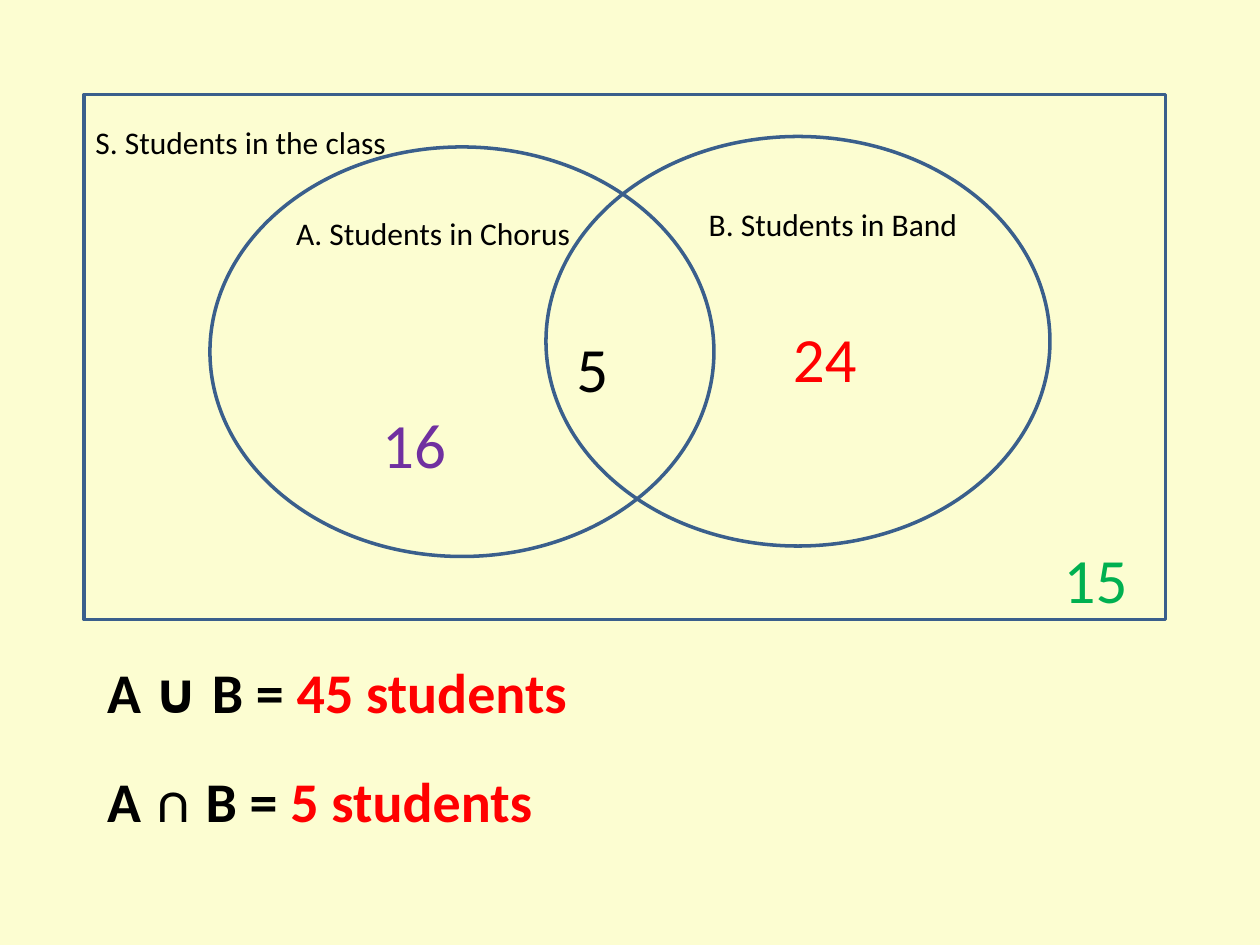
from pptx import Presentation
from pptx.dml.color import RGBColor
from pptx.enum.shapes import MSO_SHAPE
from pptx.enum.text import MSO_ANCHOR
from pptx.util import Inches, Pt

WIDE, HIGH = Inches(10), Inches(7.5)
COLS, ROWS = 120, 90
INK, RED = "000000", "FF0000"


def tint(code):
    return RGBColor.from_string(code)


def grid(left, top, width, height):
    """Turn grid columns and rows into slide lengths."""
    col, row = WIDE / COLS, HIGH / ROWS
    return [int(n) for n in (left * col, top * row, width * col, height * row)]


def outline(slide, kind, *cells):
    shape = slide.shapes.add_shape(kind, *grid(*cells))
    shape.shadow.inherit = False
    shape.fill.background()
    shape.line.color.rgb = tint("3A5F8C")
    shape.line.width = Pt(2)


def box(slide, *cells):
    frame = slide.shapes.add_textbox(*grid(*cells)).text_frame
    frame.word_wrap = True
    frame.margin_left = frame.margin_right = 0
    frame.margin_top = frame.margin_bottom = 0
    return frame


def write(para, text, size=18, color=INK, bold=False):
    run = para.add_run()
    run.text = text
    font = run.font
    font.name, font.size, font.bold = "Calibri", Pt(size), bold
    font.color.rgb = tint(color)


def label(slide, text, left, mid, width=30, **style):
    """Place one line of text centred on the row mid."""
    high = 8
    frame = box(slide, left, mid - high / 2, width, high)
    frame.vertical_anchor = MSO_ANCHOR.MIDDLE
    write(frame.paragraphs[0], text, **style)


def answers(slide, pairs):
    frame = box(slide, 10.2, 62.6, 100, 17)
    for i, (sets, count) in enumerate(pairs):
        para = frame.add_paragraph() if i else frame.paragraphs[0]
        para.space_before = Pt(24 if i else 0)
        write(para, sets, size=32, bold=True)
        write(para, count, size=32, color=RED, bold=True)


def main():
    deck = Presentation()
    deck.slide_width, deck.slide_height = WIDE, HIGH
    slide = deck.slides.add_slide(deck.slide_layouts[6])
    fill = slide.background.fill
    fill.solid()
    fill.fore_color.rgb = tint("FCFDD1")

    outline(slide, MSO_SHAPE.RECTANGLE, 8, 9, 103, 50)
    for left, top in ((20, 14), (52, 13)):
        outline(slide, MSO_SHAPE.OVAL, left, top, 48, 39)

    for text, left, mid in (
        ("S. Students in the class", 9.1, 13.5),
        ("A. Students in Chorus", 28.2, 22.2),
        ("B. Students in Band", 67.5, 21.3),
    ):
        label(slide, text, left, mid)

    for text, left, mid, color in (
        ("5", 54.9, 35, INK),
        ("16", 36.4, 42.2, "7030A0"),
        ("24", 75.5, 34, RED),
        ("15", 101.3, 55.1, "00B050"),
    ):
        label(slide, text, left, mid, width=8, size=36, color=color)

    answers(slide, [("A ∪ B = ", "45 students"), ("A ∩ B = ", "5 students")])
    deck.save("out.pptx")


if __name__ == "__main__":
    main()
